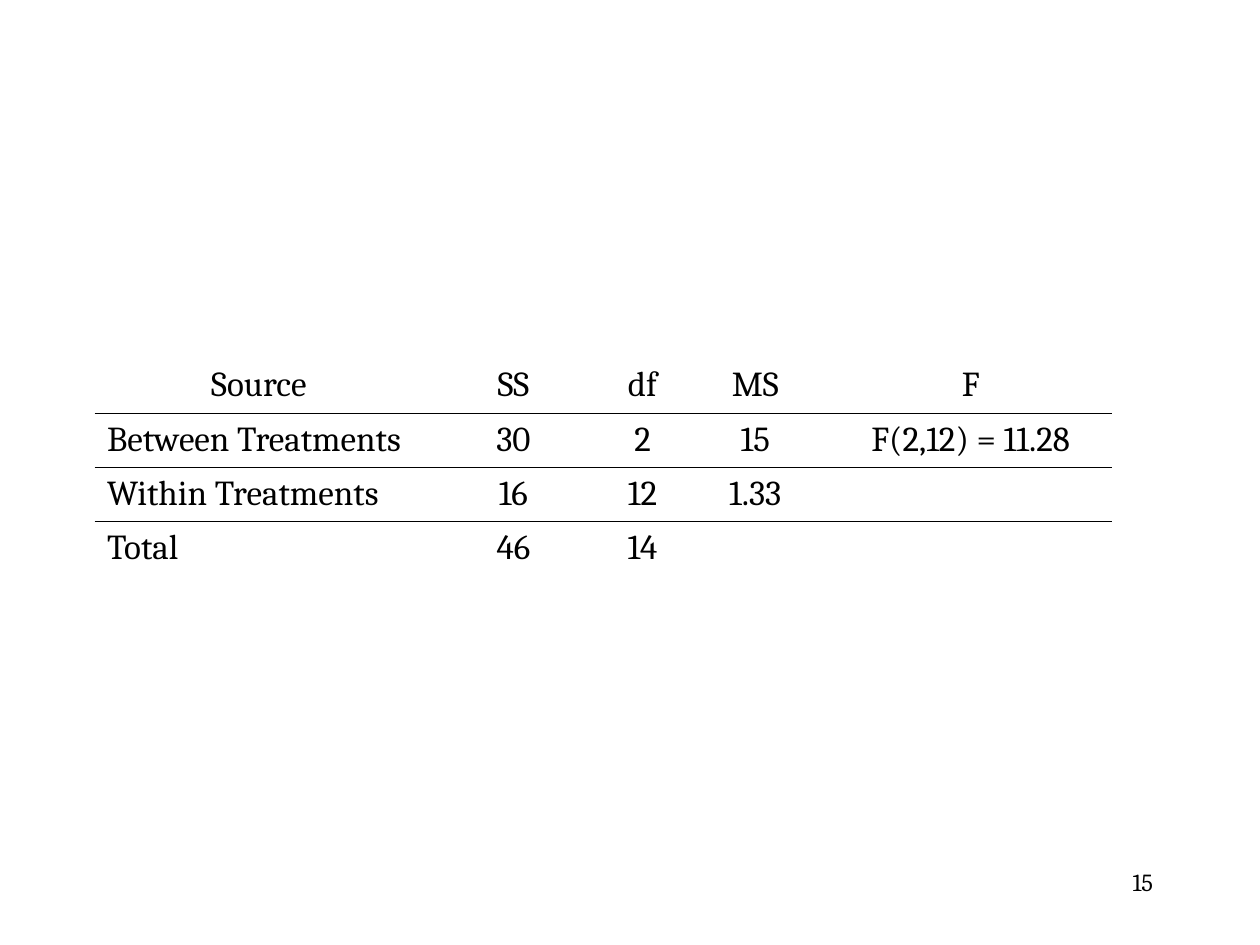
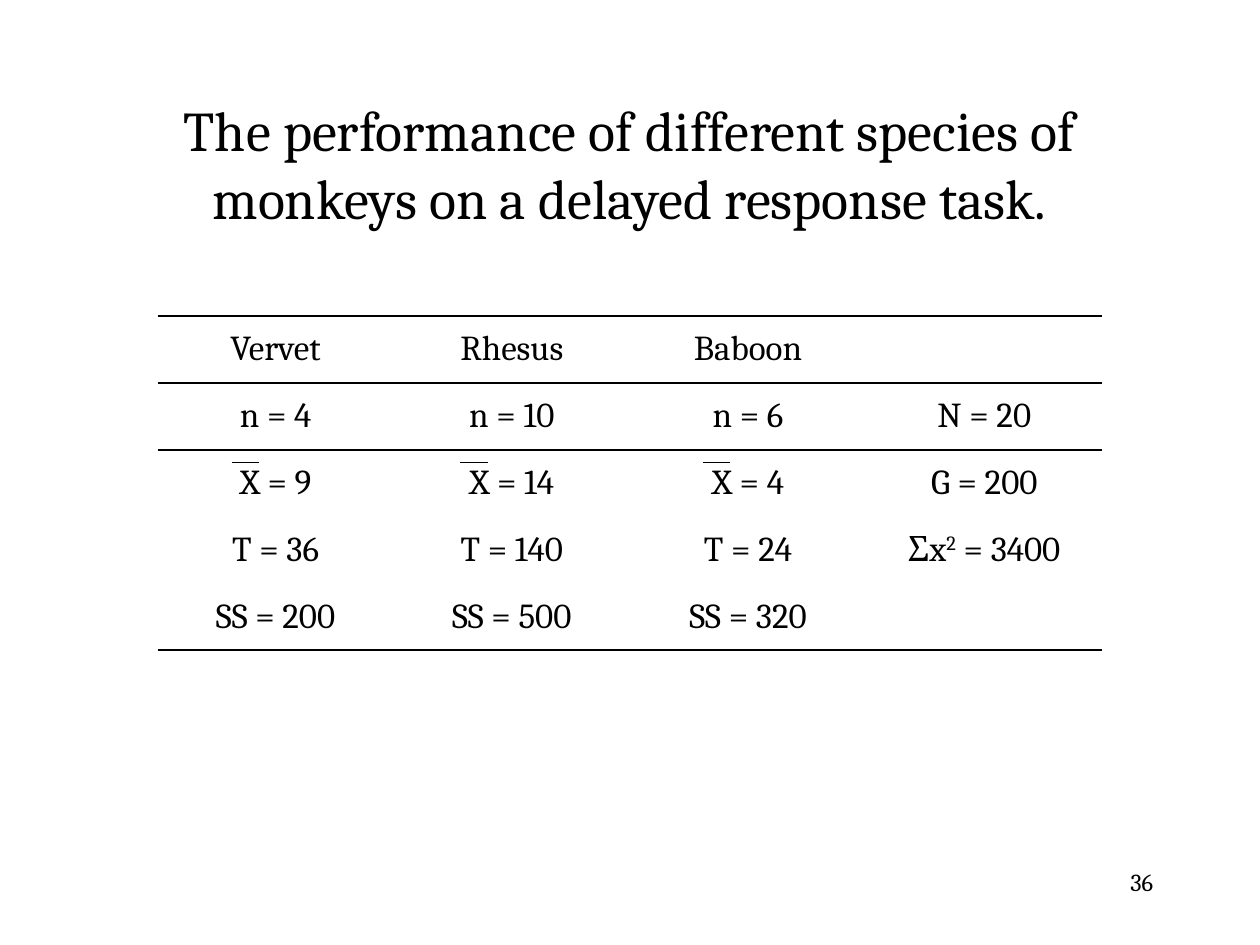
"""Build two statistics slides: an ANOVA summary and group data for monkey species."""
from lxml.etree import SubElement
from pptx import Presentation
from pptx.dml.color import RGBColor
from pptx.enum.shapes import MSO_CONNECTOR
from pptx.enum.text import MSO_ANCHOR as Anchor, PP_ALIGN as Align
from pptx.oxml.ns import qn
from pptx.util import Inches, Pt

BLACK = RGBColor(0x00, 0x00, 0x00)
FONT = "Cambria"
TITLE_SIZE, TABLE_SIZE, NUMBER_SIZE = 32, 20, 14
TITLE_BOX = (0.75, 0.67, 8.5, 1.25)
NUMBER_BOX = (7.17, 6.83, 2.08, 0.5)
PLAIN_TABLE_STYLE = "{2D5ABB26-0587-4C30-8999-92F81FD0307C}"
TITLE_ONLY, BLANK = 5, 6

ANOVA = {
    "number": "15",
    "origin": (0.75, 2.85),
    "columns": [2.61, 1.43, 0.62, 1.17, 2.25],
    "row_height": 0.43,
    "rules": [1, 3],
    "anchor": Anchor.TOP,
    "label_column": True,
    "rows": [
        ["Source", "SS", "df", "MS", "F"],
        ["Between Treatments", "30", "2", "15", "F(2,12) = 11.28"],
        ["Within Treatments", "16", "12", "1.33", ""],
        ["Total", "46", "14", "", ""],
    ],
}
MONKEYS = {
    "number": "36",
    "title": "The performance of different species of monkeys on a delayed response task.",
    "origin": (1.25, 2.51),
    "columns": [7.5 / 4] * 4,
    "row_height": 0.53,
    "rules": [0, 1, 5],
    "anchor": Anchor.MIDDLE,
    "label_column": False,
    "rows": [
        ["Vervet", "Rhesus", "Baboon", ""],
        ["n = 4", "n = 10", "n = 6", "N = 20"],
        ["X = 9", "X = 14", "X = 4", "G = 200"],
        ["T = 36", "T = 140", "T = 24", ("Σx", "2", " = 3400")],
        ["SS = 200", "SS = 500", "SS = 320", ""],
    ],
}
MEAN_BAR_TOP, MEAN_BAR_WIDTH = 3.67, 0.22
MEAN_BAR_OFFSETS = [0.35, 0.41, 0.36]


def write(paragraph, text, size, alignment):
    paragraph.alignment = alignment
    parts = (text,) if isinstance(text, str) else text
    for index, part in enumerate(parts):
        run = paragraph.add_run()
        run.text = part
        for name, value in {"name": FONT, "size": Pt(size)}.items():
            setattr(run.font, name, value)
        run.font.color.rgb = BLACK
        if index == 1:
            run.font._element.set("baseline", "30000")


def add_border(cell, side):
    properties = cell._tc.get_or_add_tcPr()
    line = SubElement(properties, qn(f"a:ln{side}"), w=str(Pt(1)))
    fill = SubElement(line, qn("a:solidFill"))
    SubElement(fill, qn("a:srgbClr"), val=str(BLACK))


def add_ruled_table(slide, content):
    rows, columns = content["rows"], content["columns"]
    left, top = content["origin"]
    frame = slide.shapes.add_table(
        len(rows), len(columns), Inches(left), Inches(top),
        Inches(sum(columns)), Inches(content["row_height"] * len(rows)))
    table = frame.table
    table.first_row = table.horz_banding = False
    table._tbl.tblPr.find(qn("a:tableStyleId")).text = PLAIN_TABLE_STYLE
    for column, width in zip(table.columns, columns):
        column.width = Inches(width)
    for row_index, texts in enumerate(rows):
        table.rows[row_index].height = Inches(content["row_height"])
        for column_index, text in enumerate(texts):
            cell = table.cell(row_index, column_index)
            for side, boundary in (("T", row_index), ("B", row_index + 1)):
                if boundary in content["rules"]:
                    add_border(cell, side)
            cell.fill.background()
            cell.vertical_anchor = content["anchor"]
            is_label = content["label_column"] and column_index == 0 and row_index > 0
            if text:
                write(cell.text_frame.paragraphs[0], text, TABLE_SIZE,
                      Align.LEFT if is_label else Align.CENTER)


def add_mean_bars(slide, content):
    width = content["columns"][0]
    for index, offset in enumerate(MEAN_BAR_OFFSETS):
        left = content["origin"][0] + (index + 0.5) * width - offset
        bar = slide.shapes.add_connector(
            MSO_CONNECTOR.STRAIGHT, Inches(left), Inches(MEAN_BAR_TOP),
            Inches(left + MEAN_BAR_WIDTH), Inches(MEAN_BAR_TOP))
        bar.line.color.rgb = BLACK
        bar.line.width = Pt(0.75)
        SubElement(bar._element.spPr, qn("a:effectLst"))


def add_title(slide, text):
    title = slide.shapes.title
    for name, value in zip(("left", "top", "width", "height"), TITLE_BOX):
        setattr(title, name, Inches(value))
    title.text_frame.vertical_anchor = Anchor.MIDDLE
    write(title.text_frame.paragraphs[0], text, TITLE_SIZE, Align.CENTER)


def add_slide(presentation, content):
    has_title = "title" in content
    layout = presentation.slide_layouts[TITLE_ONLY if has_title else BLANK]
    slide = presentation.slides.add_slide(layout)
    if has_title:
        add_title(slide, content["title"])
    add_ruled_table(slide, content)
    number = slide.shapes.add_textbox(*map(Inches, NUMBER_BOX)).text_frame
    number.word_wrap = True
    write(number.paragraphs[0], content["number"], NUMBER_SIZE, Align.RIGHT)
    return slide


def main():
    presentation = Presentation()
    presentation.slide_width, presentation.slide_height = Inches(10), Inches(7.5)
    add_slide(presentation, ANOVA)
    add_mean_bars(add_slide(presentation, MONKEYS), MONKEYS)
    presentation.save("out.pptx")


if __name__ == "__main__":
    main()
